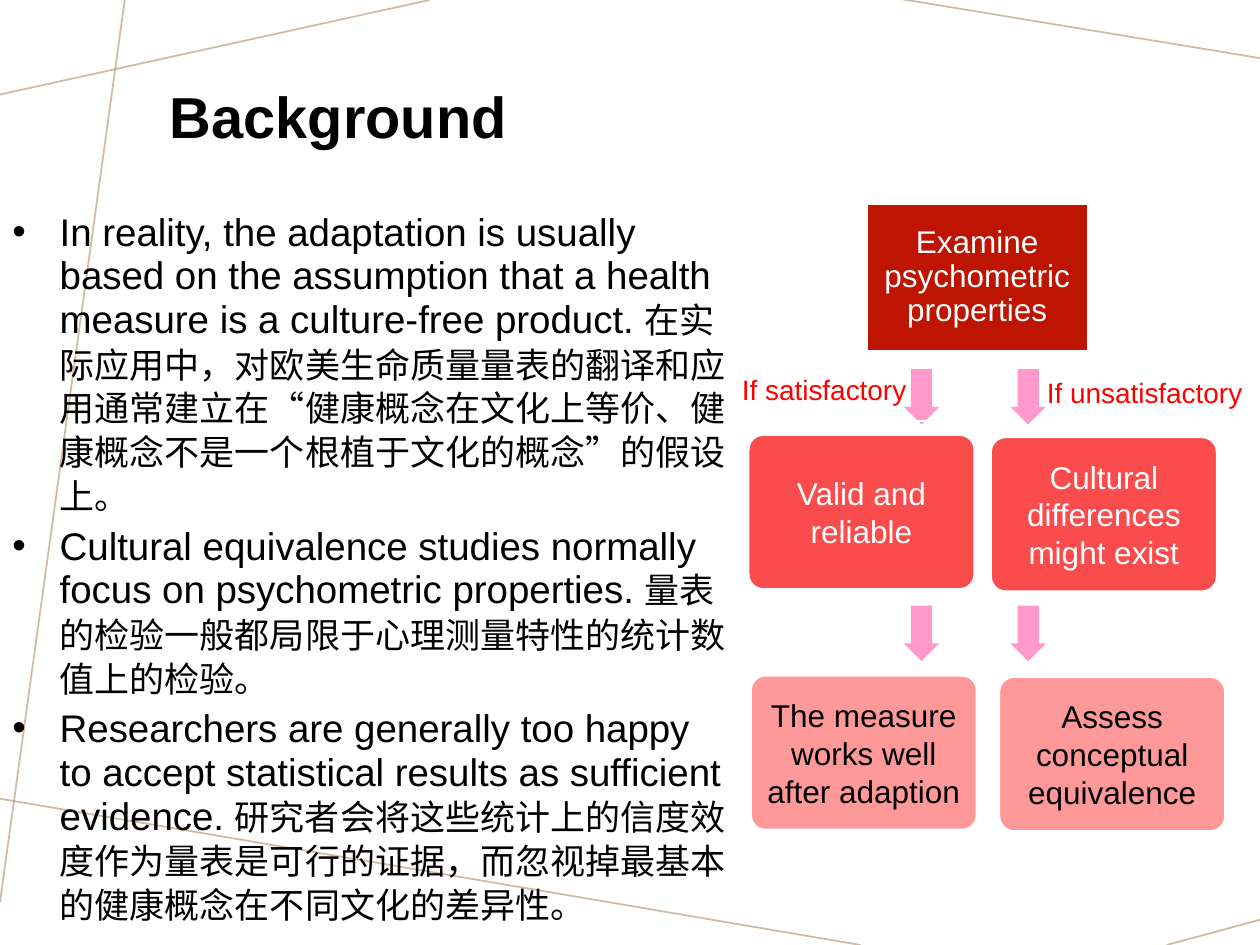
from dataclasses import dataclass

from lxml import etree
from pptx import Presentation
from pptx.dml.color import RGBColor
from pptx.enum import shapes, text
from pptx.oxml import ns
from pptx.util import Pt


@dataclass(frozen=True)
class Theme:
    latin: str = "Arial"
    chinese: str = "Noto Sans CJK SC"
    black: str = "000000"
    white: str = "FFFFFF"
    red: str = "FF0000"
    dark_red: str = "BE1402"
    coral: str = "FA4C4C"
    salmon: str = "FF9999"
    pink: str = "FF99CC"
    tan: str = "BA9E7F"
    title: int = 33
    body: int = 22
    body_chinese: int = 20
    node: int = 18
    label: int = 16


THEME = Theme()

RAYS = [
    (245.5, 0, 0, 54),
    (71.3, 0, 0, 515.5),
    (491.8, 540, -3.6, 455.8),
    (959.8, 460.8, 666.7, 540),
    (959.8, 72.7, 514.1, -0.7),
]

POINTS = [
    ("In reality, the adaptation is usually based on the assumption that a health "
     "measure is a culture-free product. ",
     "在实际应用中，对欧美生命质量量表的翻译和应用通常建立在“健康概念在文化上等价、"
     "健康概念不是一个根植于文化的概念”的假设上。"),
    ("Cultural equivalence studies normally focus on psychometric properties. ",
     "量表的检验一般都局限于心理测量特性的统计数值上的检验。"),
    ("Researchers are generally too happy to accept statistical results as "
     "sufficient evidence. ",
     "研究者会将这些统计上的信度效度作为量表是可行的证据，而忽视掉最基本的健康概念"
     "在不同文化的差异性。"),
]


def color(value):
    return RGBColor.from_string(value)


def style(font, size, value, bold=False):
    font.name = THEME.latin
    font.size = Pt(size)
    font.color.rgb = color(value)
    font.bold = bold


def add_rays(page):
    for ray in RAYS:
        line = page.shapes.add_connector(
            shapes.MSO_CONNECTOR.STRAIGHT, *(Pt(value) for value in ray))
        line.line.width = Pt(1)
        line.line.color.rgb = color(THEME.tan)
        properties = line._element.spPr
        tint = properties.find(".//" + ns.qn("a:srgbClr"))
        etree.SubElement(tint, ns.qn("a:alpha"), val="70000")
        etree.SubElement(properties, ns.qn("a:effectLst"))


def add_text(page, box, words, size, value, spacing, bold=False):
    shape = page.shapes.add_textbox(*(Pt(length) for length in box))
    frame = shape.text_frame
    frame.word_wrap = True
    frame.vertical_anchor = text.MSO_ANCHOR.MIDDLE
    para = frame.paragraphs[0]
    para.text = words
    para.line_spacing = Pt(spacing)
    style(para.font, size, value, bold)
    return shape


def add_points(page, box):
    frame = page.shapes.add_textbox(*(Pt(length) for length in box)).text_frame
    frame.word_wrap = True
    for index, (english, chinese) in enumerate(POINTS):
        para = frame.paragraphs[0] if index == 0 else frame.add_paragraph()
        para.space_before = Pt(4.4)
        para.line_spacing = Pt(25)
        properties = para._p.get_or_add_pPr()
        properties.set("marL", str(Pt(27)))
        properties.set("indent", str(Pt(-27)))
        etree.SubElement(properties, ns.qn("a:buFont"), typeface=THEME.latin)
        etree.SubElement(properties, ns.qn("a:buChar"), char="•")
        for words, size, name in (
            (english, THEME.body, THEME.latin),
            (chinese, THEME.body_chinese, THEME.chinese),
        ):
            span = para.add_run()
            span.text = words
            style(span.font, size, THEME.black)
            span.font.name = name
            etree.SubElement(span._r.get_or_add_rPr(), ns.qn("a:ea"),
                             typeface=THEME.chinese)


def add_node(page, box, words, fill, value, rounded=True):
    kind = shapes.MSO_SHAPE.ROUNDED_RECTANGLE if rounded else shapes.MSO_SHAPE.RECTANGLE
    node = page.shapes.add_shape(kind, *(Pt(length) for length in box))
    node.shadow.inherit = False
    node.fill.solid()
    node.fill.fore_color.rgb = color(fill)
    node.line.color.rgb = color(THEME.white)
    node.line.width = Pt(2 if rounded else 0.75)
    frame = node.text_frame
    frame.word_wrap = True
    frame.vertical_anchor = text.MSO_ANCHOR.MIDDLE
    para = frame.paragraphs[0]
    para.text = words
    para.alignment = text.PP_ALIGN.CENTER
    style(para.font, THEME.node, value)
    if rounded:
        node.adjustments[0] = 0.1
    else:
        para.line_spacing = 0.9
        frame.margin_left = frame.margin_right = Pt(4.5)
        frame.margin_top = frame.margin_bottom = Pt(4.5)


def add_arrow(page, center, middle):
    length, breadth = 31.7, 20.2
    arrow = page.shapes.add_shape(
        shapes.MSO_SHAPE.RIGHT_ARROW, Pt(center - length / 2),
        Pt(middle - breadth / 2), Pt(length), Pt(breadth))
    arrow.rotation = 90
    arrow.adjustments[0] = 0.6
    arrow.shadow.inherit = False
    arrow.fill.solid()
    arrow.fill.fore_color.rgb = color(THEME.pink)
    arrow.line.fill.background()


def add_flow(page, box):
    left, top, width, height = box
    add_node(page, (left + 78.5, top, 126, 84), "Examine psychometric properties",
             THEME.dark_red, THEME.white, rounded=False)
    for x, y, words, fill, value in (
        (10.4, 131.5, "Valid and reliable", THEME.coral, THEME.white),
        (148.9, 132.8, "Cultural differences might exist", THEME.coral, THEME.white),
        (11.7, 269, "The measure works well after adaption", THEME.salmon, THEME.black),
        (153.7, 269.8, "Assess conceptual equivalence", THEME.salmon, THEME.black),
    ):
        add_node(page, (left + x, top + y, 130, 89), words, fill, value)
    for middle in (110.2, 245.4):
        for center in (109.7, 170.6):
            add_arrow(page, left + center, top + middle)
    label = add_text(page, (left, top + 89.3, 128.2, 34.6), "If satisfactory",
                     THEME.label, THEME.red, 18)
    label.line.color.rgb = color(THEME.white)
    label.line.width = Pt(0.75)
    add_text(page, (left + 174.2, top + 90.7, width - 174.2, 34.6),
             "If unsatisfactory", THEME.label, THEME.red, 18)


def main():
    deck = Presentation()
    deck.slide_width, deck.slide_height = Pt(720), Pt(540)
    page = deck.slides.add_slide(deck.slide_layouts[6])
    add_rays(page)
    add_points(page, (0, 116.6, 424.1, 410.4))
    add_flow(page, (416.9, 116.6, 303.1, 358.8))
    add_text(page, (90, 41.8, 581.8, 76.3), "Background",
             THEME.title, THEME.black, 12, bold=True)
    deck.save("out.pptx")


if __name__ == "__main__":
    main()
